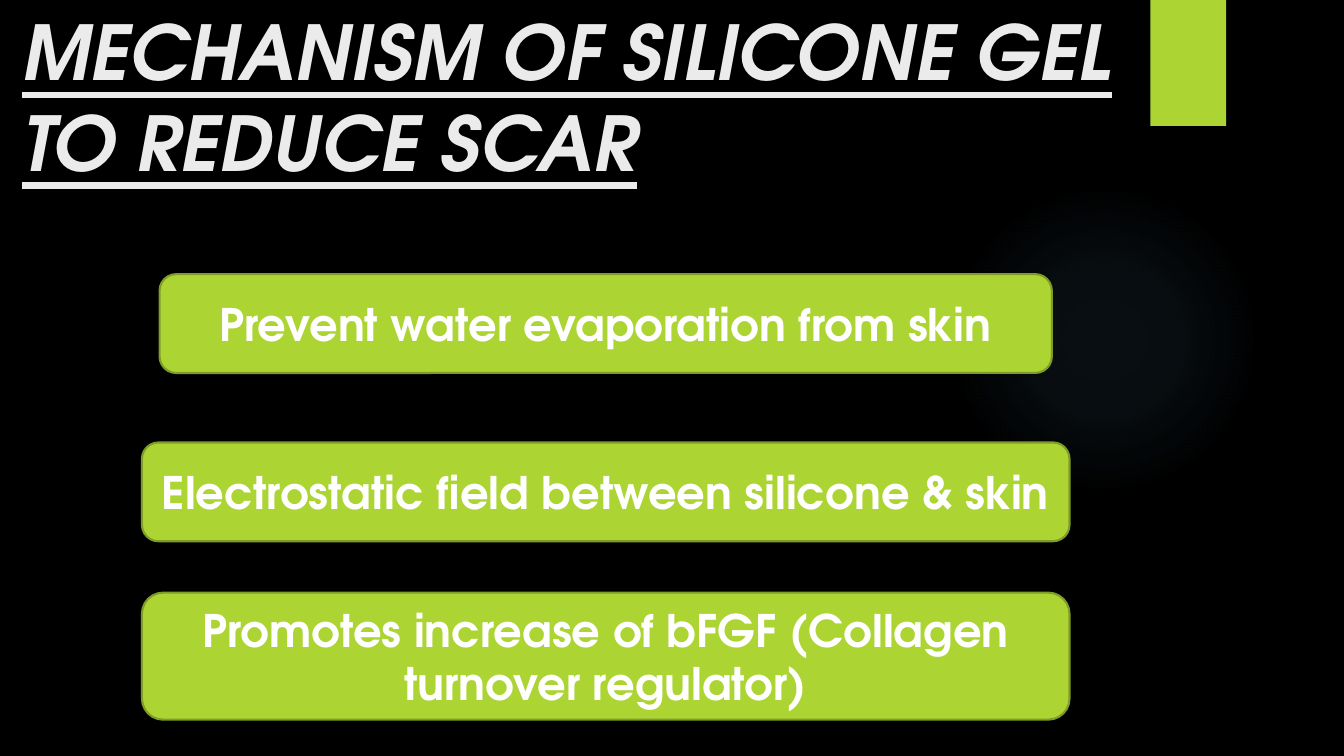
from dataclasses import dataclass

from lxml.etree import SubElement
from pptx import Presentation
from pptx.dml.color import RGBColor
from pptx.enum.shapes import MSO_SHAPE
from pptx.enum.text import MSO_ANCHOR, MSO_AUTO_SIZE, PP_ALIGN
from pptx.oxml.ns import qn
from pptx.shapes.autoshape import Shape
from pptx.slide import Slide
from pptx.util import Inches, Pt


@dataclass(frozen=True)
class Theme:
    font: str = "TeX Gyre Adventor"
    background: str = "000000"
    accent: str = "ACD433"
    outline: str = "7F9D26"
    glow: str = "7AC4F0"
    title: str = "EBEBEB"
    text: str = "FFFFFF"
    title_size: int = 54
    card_size: int = 32


@dataclass(frozen=True)
class Area:
    left: float
    top: float
    width: float
    height: float


@dataclass(frozen=True)
class Card:
    text: str
    top: float
    width: float
    height: float

    def area(self) -> Area:
        return Area(CARD_CENTER - self.width / 2, self.top, self.width, self.height)


THEME = Theme()
SLIDE_WIDTH = Inches(13.33)
SLIDE_HEIGHT = Inches(7.5)
CARD_CENTER = 45.07
TITLE_AREA = Area(0.9, 0, 83.12, 21.2)
GLOW_AREA = Area(70.59, 24.4, 23.11, 41.07)
TAB_AREA = Area(85.6, 0, 5.63, 16.67)
GLOW_STOPS = ((0, 7), (36, 6), (69, 0))
CARDS = (
    Card("Prevent water evaporation from skin", 36.27, 66.39, 13.07),
    Card("Electrostatic field between silicone & skin", 58.53, 69.02, 13.07),
    Card("Promotes increase of bFGF (Collagen turnover regulator)", 78.4, 69.02, 16.8),
)


def place(shape: Shape, area: Area) -> None:
    shape.left = round(SLIDE_WIDTH * area.left / 100)
    shape.top = round(SLIDE_HEIGHT * area.top / 100)
    shape.width = round(SLIDE_WIDTH * area.width / 100)
    shape.height = round(SLIDE_HEIGHT * area.height / 100)


def add_block(slide: Slide, kind: MSO_SHAPE, area: Area) -> Shape:
    shape = slide.shapes.add_shape(kind, 0, 0, 0, 0)
    place(shape, area)
    shape.shadow.inherit = False
    shape.fill.solid()
    shape.fill.fore_color.rgb = RGBColor.from_string(THEME.accent)
    shape.line.fill.background()
    return shape


def write_text(shape: Shape, text: str, *, size: int, color: str,
               align: PP_ALIGN, anchor: MSO_ANCHOR,
               italic: bool = False, underline: bool = False) -> None:
    frame = shape.text_frame
    frame.word_wrap = True
    frame.auto_size = MSO_AUTO_SIZE.NONE
    frame.vertical_anchor = anchor
    paragraph = frame.paragraphs[0]
    paragraph.alignment = align
    run = paragraph.add_run()
    run.text = text
    run.font.name = THEME.font
    run.font.size = Pt(size)
    run.font.bold = True
    run.font.italic = italic
    run.font.underline = underline
    run.font.color.rgb = RGBColor.from_string(color)


def add_glow(slide: Slide) -> None:
    glow = add_block(slide, MSO_SHAPE.OVAL, GLOW_AREA)
    glow.fill.gradient()
    gradient = glow.element.spPr.find(qn("a:gradFill"))
    for child in list(gradient):
        gradient.remove(child)
    stops = SubElement(gradient, qn("a:gsLst"))
    for position, opacity in GLOW_STOPS:
        stop = SubElement(stops, qn("a:gs"), pos=str(position * 1000))
        color = SubElement(stop, qn("a:srgbClr"), val=THEME.glow)
        SubElement(color, qn("a:alpha"), val=str(opacity * 1000))
    shading = SubElement(gradient, qn("a:path"), path="circle")
    SubElement(shading, qn("a:fillToRect"),
               {side: "50000" for side in ("l", "t", "r", "b")})


def add_title(slide: Slide) -> None:
    title = slide.shapes.title
    place(title, TITLE_AREA)
    write_text(title, "MECHANISM OF SILICONE GEL TO REDUCE SCAR",
               size=THEME.title_size, color=THEME.title, align=PP_ALIGN.LEFT,
               anchor=MSO_ANCHOR.TOP, italic=True, underline=True)


def add_card(slide: Slide, card: Card) -> None:
    shape = add_block(slide, MSO_SHAPE.ROUNDED_RECTANGLE, card.area())
    shape.line.color.rgb = RGBColor.from_string(THEME.outline)
    shape.line.width = Pt(1.5)
    write_text(shape, card.text, size=THEME.card_size, color=THEME.text,
               align=PP_ALIGN.CENTER, anchor=MSO_ANCHOR.MIDDLE)


def main() -> None:
    presentation = Presentation()
    presentation.slide_width = SLIDE_WIDTH
    presentation.slide_height = SLIDE_HEIGHT
    slide = presentation.slides.add_slide(presentation.slide_layouts[5])
    slide.background.fill.solid()
    slide.background.fill.fore_color.rgb = RGBColor.from_string(THEME.background)
    add_glow(slide)
    add_block(slide, MSO_SHAPE.RECTANGLE, TAB_AREA)
    add_title(slide)
    for card in CARDS:
        add_card(slide, card)
    presentation.save("out.pptx")


if __name__ == "__main__":
    main()
